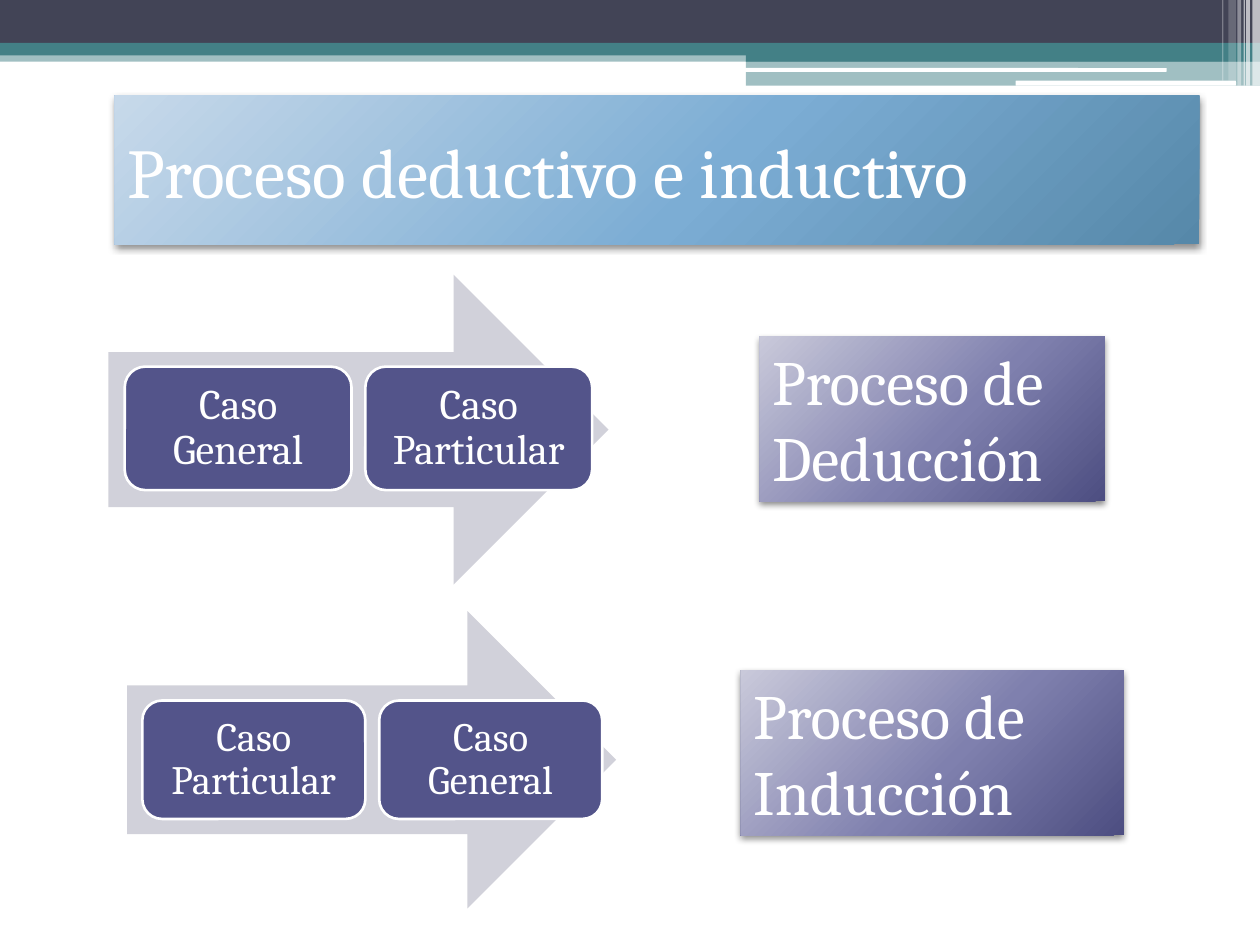
from lxml import etree
from pptx import Presentation
from pptx.dml.color import RGBColor
from pptx.enum.shapes import MSO_SHAPE
from pptx.enum.text import MSO_ANCHOR, MSO_AUTO_SIZE, PP_ALIGN
from pptx.oxml import parse_xml
from pptx.oxml.ns import nsdecls, qn
from pptx.util import Inches, Pt

RECT, ROUNDED, ARROW = MSO_SHAPE.RECTANGLE, MSO_SHAPE.ROUNDED_RECTANGLE, MSO_SHAPE.RIGHT_ARROW
LEFT, CENTER = PP_ALIGN.LEFT, PP_ALIGN.CENTER
TOP, MIDDLE = MSO_ANCHOR.TOP, MSO_ANCHOR.MIDDLE
NO_FIT, GROW = MSO_AUTO_SIZE.NONE, MSO_AUTO_SIZE.SHAPE_TO_FIT_TEXT

THEME = {
    "font": "Cambria",
    "white": "FFFFFF", "dark": "424456", "teal": "438086",
    "arrow": "D1D1DA", "step": "53548A",
    "title_gradient": ("C7D9EA", "7CADD4", "5688A9"),
    "label_gradient": ("C9C9DA", "7F80AE", "4D4E81"),
    "title_size": 40, "label_size": 36,
}

TITLE = ("Proceso deductivo e inductivo", (0.91, 0.76, 8.61, 1.18))
PROCESSES = [
    {"arrow": (0.86, 2.18, 3.97, 2.46), "steps": ["Caso General", "Caso Particular"],
     "first_step": (0.99, 2.91, 1.8, 0.98), "step_size": 24,
     "label": ["Proceso de", "Deducción"], "label_box": (6.03, 2.67, 2.74, 1.31), "wrap": False},
    {"arrow": (1.01, 4.85, 3.88, 2.36), "steps": ["Caso Particular", "Caso General"],
     "first_step": (1.13, 5.56, 1.77, 0.94), "step_size": 23,
     "label": ["Proceso de", "Inducción"], "label_box": (5.88, 5.32, 3.04, 1.31), "wrap": True},
]
STEP_GAP = 0.11

# box, preset, colour, opacity in percent
BANNER = [
    ((0, 0.4, 10, 0.09), RECT, "teal", 50),
    ((0, 0, 10, 0.34), RECT, "dark", 100),
    ((0, 0.34, 10, 0.1), RECT, "teal", 100),
    ((5.92, 0.39, 4.08, 0.1), RECT, "teal", 100),
    ((5.92, 0.48, 4.08, 0.2), RECT, "teal", 50),
    ((5.91, 0.54, 3.35, 0.03), ROUNDED, "white", 100),
    ((8.06, 0.64, 1.75, 0.04), ROUNDED, "white", 100),
]
# left, width, height, opacity in percent
STRIPES = [
    (9.94, 0.06, 0.68, 65), (9.89, 0.03, 0.68, 65), (9.87, 0.01, 0.68, 60),
    (9.82, 0.03, 0.68, 40), (9.75, 0.06, 0.64, 20), (9.7, 0.01, 0.64, 30),
]


def color(name):
    return RGBColor.from_string(THEME[name])


def add_block(slide, preset, box, fill, opacity=100):
    block = slide.shapes.add_shape(preset, *map(Inches, box))
    block.shadow.inherit = False
    block.line.fill.background()
    block.fill.solid()
    block.fill.fore_color.rgb = color(fill)
    if opacity < 100:
        srgb = block.fill._xPr.find(qn("a:solidFill"))[0]
        etree.SubElement(srgb, qn("a:alpha"), val=str(opacity * 1000))
    return block


def style_panel(panel, gradient):
    """Give a panel its radial gradient, no outline and a soft shadow below."""
    panel.fill.solid()
    panel.line.fill.background()
    panel.shadow.inherit = False
    stops = "".join(
        f'<a:gs pos="{position * 1000}"><a:srgbClr val="{shade}"/></a:gs>'
        for position, shade in zip((0, 55, 100), THEME[gradient]))
    properties = panel._element.spPr
    properties.replace(properties.find(qn("a:solidFill")), parse_xml(
        f'<a:gradFill {nsdecls("a")} rotWithShape="1"><a:gsLst>{stops}</a:gsLst>'
        '<a:path path="circle"><a:fillToRect l="-40000" t="-90000" r="140000" b="190000"/>'
        '</a:path></a:gradFill>'))
    properties.find(qn("a:effectLst")).append(parse_xml(
        f'<a:outerShdw {nsdecls("a")} blurRad="{Pt(4)}" dist="{Pt(2)}" dir="5400000" '
        'rotWithShape="0"><a:srgbClr val="000000"><a:alpha val="45000"/></a:srgbClr>'
        '</a:outerShdw>'))


def write(shape, lines, size, align=LEFT, anchor=MIDDLE, wrap=True, fit=NO_FIT, spacing=1.0):
    frame = shape.text_frame
    frame.text = "\n".join(lines)
    frame.word_wrap = wrap
    frame.auto_size = fit
    frame.vertical_anchor = anchor
    for paragraph in frame.paragraphs:
        paragraph.alignment = align
        paragraph.line_spacing = spacing
        font = paragraph.runs[0].font
        font.name, font.size = THEME["font"], Pt(size)
        font.color.rgb = color("white")


def add_process(slide, process):
    add_block(slide, ARROW, process["arrow"], "arrow")
    left, top, width, height = process["first_step"]
    for index, caption in enumerate(process["steps"]):
        step = add_block(slide, ROUNDED,
                         (left + index * (width + STEP_GAP), top, width, height), "step")
        step.line.color.rgb = color("white")
        step.line.width = Pt(1.5)
        write(step, [caption], process["step_size"], CENTER, spacing=0.9)
        frame = step.text_frame
        frame.margin_left = frame.margin_right = Inches(0.1)
        frame.margin_top = frame.margin_bottom = Inches(0.1)
    label = slide.shapes.add_shape(RECT, *map(Inches, process["label_box"]))
    style_panel(label, "label_gradient")
    write(label, process["label"], THEME["label_size"], anchor=TOP, wrap=process["wrap"], fit=GROW)


def main():
    deck = Presentation()
    deck.slide_width, deck.slide_height = Inches(10), Inches(7.5)
    slide = deck.slides.add_slide(deck.slide_layouts[5])

    for box, preset, fill, opacity in BANNER:
        add_block(slide, preset, box, fill, opacity)
    for left, width, height, opacity in STRIPES:
        add_block(slide, RECT, (left, 0, width, height), "white", opacity)

    caption, box = TITLE
    title = slide.shapes.title
    title.left, title.top, title.width, title.height = map(Inches, box)
    style_panel(title, "title_gradient")
    write(title, [caption], THEME["title_size"])

    for process in PROCESSES:
        add_process(slide, process)
    deck.save("out.pptx")


if __name__ == "__main__":
    main()
